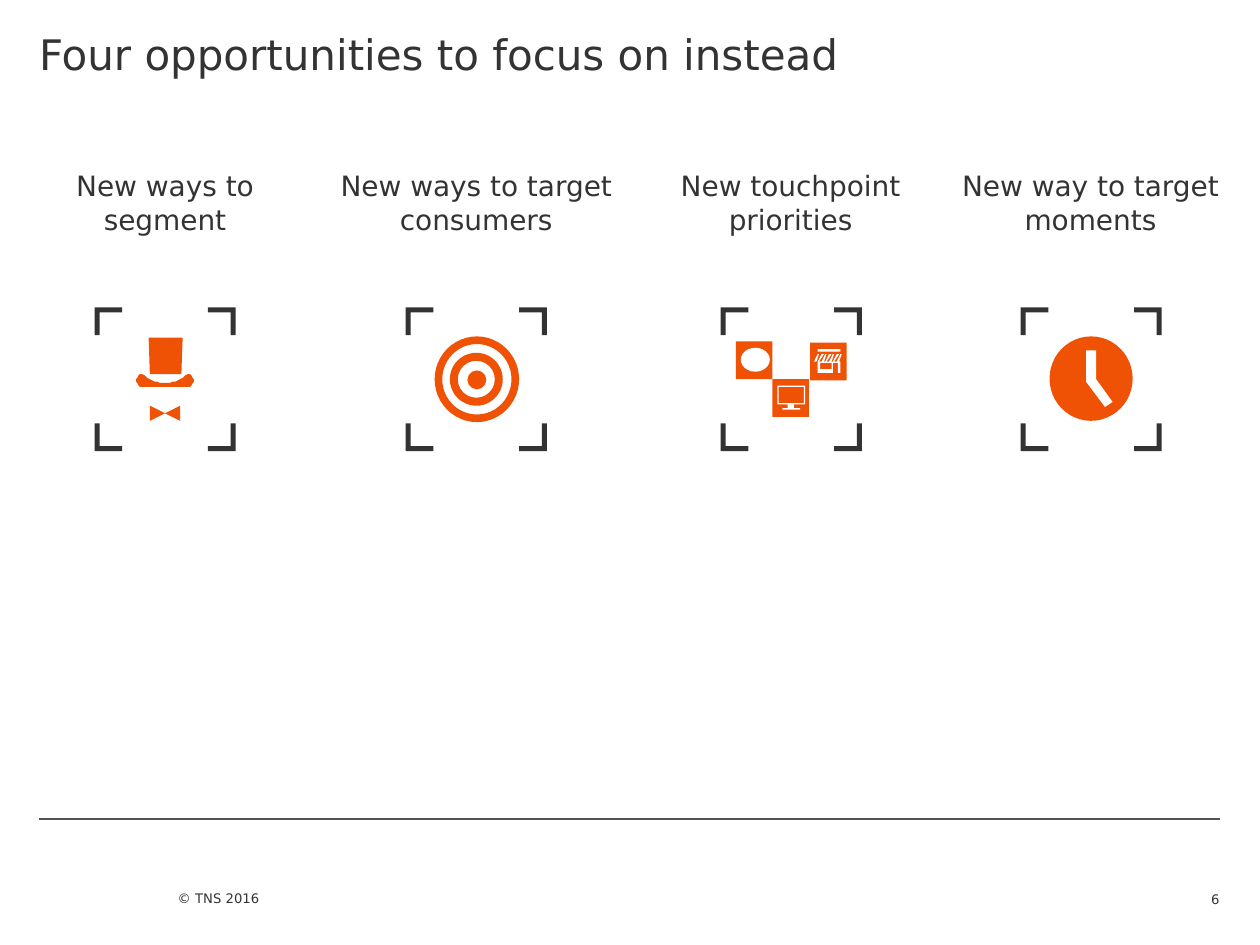
import math
import pptx
import pptx.util
import pptx.dml.color
import pptx.oxml.ns
import pptx.enum.shapes
import pptx.enum.text
import lxml.etree

DARK = pptx.dml.color.RGBColor(0x33, 0x33, 0x33)
RULE = pptx.dml.color.RGBColor(0x52, 0x52, 0x52)
ORANGE = pptx.dml.color.RGBColor(0xEF, 0x52, 0x05)
WHITE = pptx.dml.color.RGBColor(0xFF, 0xFF, 0xFF)
ALIGN = pptx.enum.text.PP_ALIGN
ANCHOR = pptx.enum.text.MSO_ANCHOR
KIND = pptx.enum.shapes.MSO_SHAPE

deck = pptx.Presentation()
deck.slide_width = pptx.util.Inches(10)
deck.slide_height = pptx.util.Inches(7.5)
slide = deck.slides.add_slide(deck.slide_layouts[5])
shapes = slide.shapes
# The grid has 1000 columns and 750 rows of square cells
CELL = deck.slide_width // 1000


def write(text, box, size=16, align=ALIGN.LEFT, anchor=ANCHOR.TOP,
          inset=(0, 0, 0, 0), shape=None):
    place = [v * CELL for v in box]
    shape = shape or shapes.add_textbox(*place)
    shape.left, shape.top, shape.width, shape.height = place
    frame = shape.text_frame
    frame.auto_size = pptx.enum.text.MSO_AUTO_SIZE.NONE
    frame.word_wrap = True
    frame.vertical_anchor = anchor
    (frame.margin_left, frame.margin_top,
     frame.margin_right, frame.margin_bottom) = [v * CELL for v in inset]
    frame.text = text
    para = frame.paragraphs[0]
    para.alignment = align
    for run in para.runs:
        run.font.name = "DejaVu Sans"
        run.font.size = pptx.util.Pt(size)
        run.font.color.rgb = DARK


def draw(color, *loops):
    path = shapes.build_freeform(*loops[0][0], scale=CELL)
    for i, loop in enumerate(loops):
        if i:
            path.move_to(*loop[0])
        path.add_line_segments(loop[1:], close=True)
    shape = path.convert_to_shape()
    shape.shadow.inherit = False
    shape.fill.solid()
    shape.fill.fore_color.rgb = color
    shape.line.fill.background()


# Title, footer and page number
write("Four opportunities to focus on instead", (31, 0, 937, 113), size=24,
      inset=(0, 23, 0, 0), shape=shapes.title)
write("© TNS 2016", (141, 692, 278, 58), size=7.5, anchor=ANCHOR.BOTTOM,
      inset=(0, 0, 0, 31))
write("6", (913, 692, 55, 28), size=7.5, align=ALIGN.RIGHT,
      anchor=ANCHOR.BOTTOM)

# Footer rule
rule = shapes.add_connector(pptx.enum.shapes.MSO_CONNECTOR.STRAIGHT,
                            31 * CELL, 650 * CELL, 968 * CELL, 650 * CELL)
rule.line.color.rgb = RULE
rule.line.width = pptx.util.Pt(0.75)
lxml.etree.SubElement(rule._element.spPr, pptx.oxml.ns.qn("a:effectLst"))

# Headings, each over a frame of four corner marks
TOP, WIDE, HIGH = 244, 112, 114
ARM, THICK = 22, 4
mark = [(0, 0), (ARM, 0), (ARM, THICK), (THICK, THICK), (THICK, ARM), (0, ARM)]
heads = [
    ("New ways to\vsegment", 9, 244, 75),
    ("New ways to target consumers", 257, 242, 322),
    ("New touchpoint priorities", 514, 227, 572),
    ("New way to target moments", 744, 243, 810),
]
for text, left, width, edge in heads:
    write(text, (left, 129, width, 87), align=ALIGN.CENTER,
          inset=(10, 5, 10, 5))
    for x, dx in ((edge, 1), (edge + WIDE, -1)):
        for y, dy in ((TOP, 1), (TOP + HIGH, -1)):
            draw(DARK, [(x + dx * a, y + dy * b) for a, b in mark])

# Target, touchpoint tiles and clock face
parts = [
    (KIND.DONUT, 345, 267, 67, 68, ORANGE, 0.09),
    (KIND.DONUT, 357, 280, 42, 42, ORANGE, 0.15),
    (KIND.OVAL, 371, 294, 15, 15, ORANGE, None),
    (KIND.RECTANGLE, 584, 271, 29, 30, ORANGE, None),
    (KIND.RECTANGLE, 613, 301, 29, 30, ORANGE, None),
    (KIND.RECTANGLE, 643, 272, 29, 30, ORANGE, None),
    (KIND.OVAL, 588, 276, 23, 19, WHITE, None),
    (KIND.OVAL, 833, 267, 66, 67, ORANGE, None),
]
for kind, x, y, w, h, color, ring in parts:
    part = shapes.add_shape(kind, x * CELL, y * CELL, w * CELL, h * CELL)
    part.shadow.inherit = False
    part.fill.solid()
    part.fill.fore_color.rgb = color
    part.line.fill.background()
    if ring:
        part.adjustments[0] = ring

# Clock hands
draw(WHITE, [(862, 278), (870, 278), (870, 301), (883, 319), (877, 323),
             (862, 303)])

# Hat: crown, then brim with a curved top and round ends
draw(ORANGE, [(118, 268), (145, 268), (144, 297), (119, 297)])
brim = [(x, 304 - 7 * ((x - 131) / 18) ** 2) for x in range(113, 150, 2)]
for mid, start in ((149, -90), (113, 90)):
    for turn in range(start, start + 181, 20):
        angle = math.radians(turn)
        brim.append((mid + 5 * math.cos(angle), 302 + 5 * math.sin(angle)))
draw(ORANGE, brim)

# Bow tie
for x in (119, 143):
    draw(ORANGE, [(x, 322), (131, 328), (x, 334)])

# Shop: sign, wall with window, awning stripes
stripes = [[(x, 281), (x + 1.5, 281), (x - 1.5, 287), (x - 3, 287)]
           for x in range(649, 668, 3)]
draw(WHITE,
     [(649, 277), (667, 277), (667, 279), (649, 279)],
     [(649, 287), (667, 287), (667, 296), (665, 296), (665, 288), (661, 288),
      (661, 296), (649, 296)],
     [(651, 288), (660, 288), (660, 293), (651, 293)],
     *stripes)

# Screen on its stand
draw(WHITE,
     [(617, 306), (639, 306), (639, 321), (630, 321), (630, 324), (635, 324),
      (635, 325), (621, 325), (621, 324), (625, 324), (625, 321), (617, 321)],
     [(618, 307), (638, 307), (638, 320), (618, 320)])

deck.save("out.pptx")
